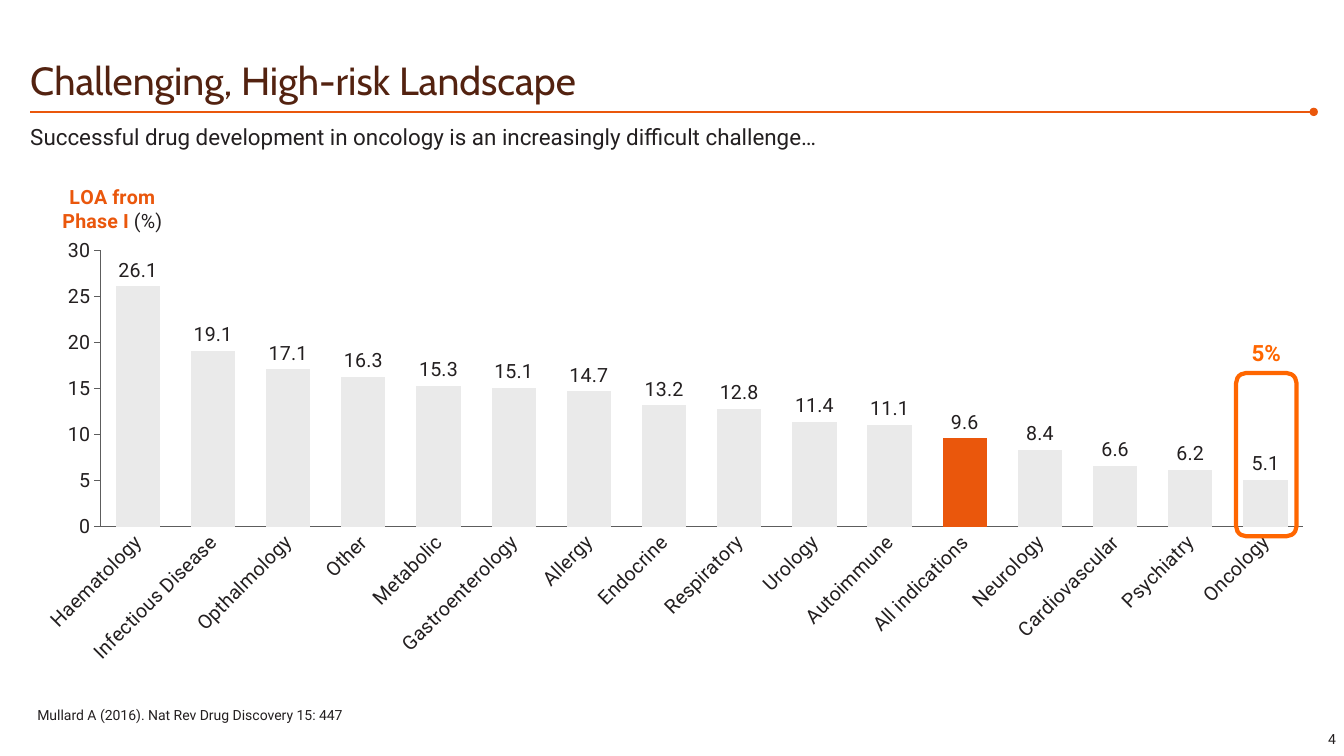
"""Build the oncology drug development risk slide."""
from lxml import etree
from pptx import Presentation
from pptx.chart.data import CategoryChartData
from pptx.dml.color import RGBColor
from pptx.enum.chart import XL_CHART_TYPE, XL_LABEL_POSITION, XL_TICK_MARK
from pptx.enum.shapes import MSO_CONNECTOR, MSO_SHAPE
from pptx.enum.text import MSO_ANCHOR, PP_ALIGN
from pptx.oxml.ns import qn
from pptx.util import Inches, Pt

COLUMN = XL_CHART_TYPE.COLUMN_CLUSTERED
OUTSIDE_END = XL_LABEL_POSITION.OUTSIDE_END
TICK_NONE, TICK_OUT = XL_TICK_MARK.NONE, XL_TICK_MARK.OUTSIDE
STRAIGHT = MSO_CONNECTOR.STRAIGHT
ROUNDED = MSO_SHAPE.ROUNDED_RECTANGLE
TOP, MIDDLE, BOTTOM = MSO_ANCHOR.TOP, MSO_ANCHOR.MIDDLE, MSO_ANCHOR.BOTTOM
LEFT, CENTER, RIGHT = PP_ALIGN.LEFT, PP_ALIGN.CENTER, PP_ALIGN.RIGHT

COLORS = {
    "title": "532210",
    "text": "231F20",
    "accent": "EA570C",
    "callout": "FF6600",
    "bar": "EAEAEA",
    "axis": "5D5D5D",
}
BODY_FONT, TITLE_FONT = "Roboto", "Cabin"
HIGHLIGHT = "All indications"
LOA_BY_AREA = {
    "Haematology": 26.1,
    "Infectious Disease": 19.1,
    "Opthalmology": 17.1,
    "Other": 16.3,
    "Metabolic": 15.3,
    "Gastroenterology": 15.1,
    "Allergy": 14.7,
    "Endocrine": 13.2,
    "Respiratory": 12.8,
    "Urology": 11.4,
    "Autoimmune": 11.1,
    HIGHLIGHT: 9.6,
    "Neurology": 8.4,
    "Cardiovascular": 6.6,
    "Psychiatry": 6.2,
    "Oncology": 5.1,
}


def rgb(name):
    """Return the palette colour of that name."""
    return RGBColor.from_string(COLORS[name])


def style_font(font, size, color="text", bold=False, face=BODY_FONT):
    """Set face, size, weight and colour of a font."""
    font.name, font.size, font.bold = face, Pt(size), bold
    font.color.rgb = rgb(color)


def fill_frame(frame, text, size, color="text", bold=False, face=BODY_FONT,
               align=LEFT, anchor=TOP):
    """Write one styled paragraph into a frame without margins."""
    frame.margin_left = frame.margin_right = 0
    frame.margin_top = frame.margin_bottom = 0
    frame.word_wrap = True
    frame.vertical_anchor = anchor
    frame.text = text
    paragraph = frame.paragraphs[0]
    paragraph.alignment = align
    style_font(paragraph.runs[0].font, size, color, bold, face)


def add_text(slide, box, text, size, **style):
    """Add a text box at left, top, width, height in inches."""
    textbox = slide.shapes.add_textbox(*map(Inches, box))
    fill_frame(textbox.text_frame, text, size, **style)


def add_title(slide, text):
    """Place and format the title placeholder."""
    title = slide.shapes.title
    title.left, title.top = Inches(0.3), Inches(0.56)
    title.width, title.height = Inches(11.56), Inches(0.47)
    fill_frame(title.text_frame, text, 28, "title", face=TITLE_FONT, anchor=BOTTOM)


def add_title_rule(slide):
    """Draw the line under the title with its round end."""
    rule = slide.shapes.add_connector(
        STRAIGHT, Inches(0.3), Inches(1.11), Inches(13.03), Inches(1.11))
    rule.line.color.rgb = rgb("accent")
    rule.line.width = Pt(1.5)
    etree.SubElement(rule.line._get_or_add_ln(), qn("a:tailEnd"), type="oval")
    etree.SubElement(rule._element.spPr, qn("a:effectLst"))


def set_layout(parent, index, **settings):
    """Give a chart part a manual layout."""
    for old in parent.findall(qn("c:layout")):
        parent.remove(old)
    layout = etree.Element(qn("c:layout"))
    manual = etree.SubElement(layout, qn("c:manualLayout"))
    for tag, value in settings.items():
        etree.SubElement(manual, qn(f"c:{tag}"), val=str(value))
    parent.insert(index, layout)


def format_axis(axis, tick_mark):
    """Style the line, ticks and labels of an axis."""
    axis.has_major_gridlines = False
    axis.major_tick_mark = tick_mark
    axis.minor_tick_mark = TICK_NONE
    axis.format.line.color.rgb = rgb("axis")
    axis.format.line.width = Pt(0.75)
    style_font(axis.tick_labels.font, 14)


def add_chart_title(chart):
    """Write the two-line heading above the value axis."""
    chart.has_title = True
    frame = chart.chart_title.text_frame
    first, second = frame.paragraphs[0], frame.add_paragraph()
    for paragraph, text, color, bold in (
            (first, "LOA from", "accent", True),
            (second, "Phase I", "accent", True),
            (second, " (%)", "text", False)):
        run = paragraph.add_run()
        run.text = text
        style_font(run.font, 14, color, bold)
    heading = chart.element.find(".//" + qn("c:title"))
    set_layout(heading, 1, xMode="edge", yMode="edge", x=0.026, y=0.01)


def format_bars(plot):
    """Colour and label the bars, with one highlighted."""
    plot.gap_width = 70
    plot.vary_by_categories = False
    series = plot.series[0]
    series.format.fill.solid()
    series.format.fill.fore_color.rgb = rgb("bar")
    highlight = series.points[list(LOA_BY_AREA).index(HIGHLIGHT)].format.fill
    highlight.solid()
    highlight.fore_color.rgb = rgb("accent")
    labels = series.data_labels
    labels.show_value = True
    labels.position = OUTSIDE_END
    labels.number_format, labels.number_format_is_linked = "0.0", False
    style_font(labels.font, 14)


def add_loa_chart(slide):
    """Add the column chart of approval likelihood by area."""
    data = CategoryChartData()
    data.categories = list(LOA_BY_AREA)
    data.add_series("Series 1", list(LOA_BY_AREA.values()))
    box = map(Inches, (0.26, 1.74, 12.67, 4.97))
    chart = slide.shapes.add_chart(COLUMN, *box, data).chart
    style_font(chart.font, 14, "axis")
    chart.has_legend = False
    add_chart_title(chart)
    format_bars(chart.plots[0])
    format_axis(chart.category_axis, TICK_NONE)
    format_axis(chart.value_axis, TICK_OUT)
    scale = chart.value_axis
    scale.minimum_scale, scale.maximum_scale, scale.major_unit = 0, 30, 5
    scale.tick_labels.number_format = "0"
    scale.tick_labels.number_format_is_linked = False
    label_body = chart.element.find(f".//{qn('c:catAx')}/{qn('c:txPr')}/{qn('a:bodyPr')}")
    label_body.set("rot", str(-45 * 60000))
    set_layout(chart.element.find(".//" + qn("c:plotArea")), 0,
               layoutTarget="inner", xMode="edge", yMode="edge",
               x=0.058, y=0.15, w=0.942, h=0.552)


def add_callout(slide):
    """Frame the oncology bar and write its rounded value above."""
    frame = slide.shapes.add_shape(ROUNDED, *map(Inches, (12.26, 3.7, 0.6, 1.62)))
    frame.shadow.inherit = False
    frame.fill.background()
    frame.line.color.rgb = rgb("callout")
    frame.line.width = Pt(3)
    add_text(slide, (12.26, 3.36, 0.6, 0.27), "5%", 16,
             color="callout", bold=True, align=CENTER)


def main():
    """Build and save the slide."""
    deck = Presentation()
    deck.slide_width, deck.slide_height = Inches(13.33), Inches(7.5)
    slide = deck.slides.add_slide(deck.slide_layouts[5])
    add_text(slide, (13.03, 7.25, 0.22, 0.17), "4", 10, align=RIGHT, anchor=MIDDLE)
    add_title_rule(slide)
    add_title(slide, "Challenging, High-risk Landscape")
    add_text(slide, (0.37, 7.01, 3.21, 0.17),
             "Mullard A (2016). Nat Rev Drug Discovery 15: 447", 10)
    add_text(slide, (0.3, 1.22, 12.71, 0.29),
             "Successful drug development in oncology is an increasingly difficult challenge…", 16)
    add_loa_chart(slide)
    add_callout(slide)
    deck.save("out.pptx")


if __name__ == "__main__":
    main()
